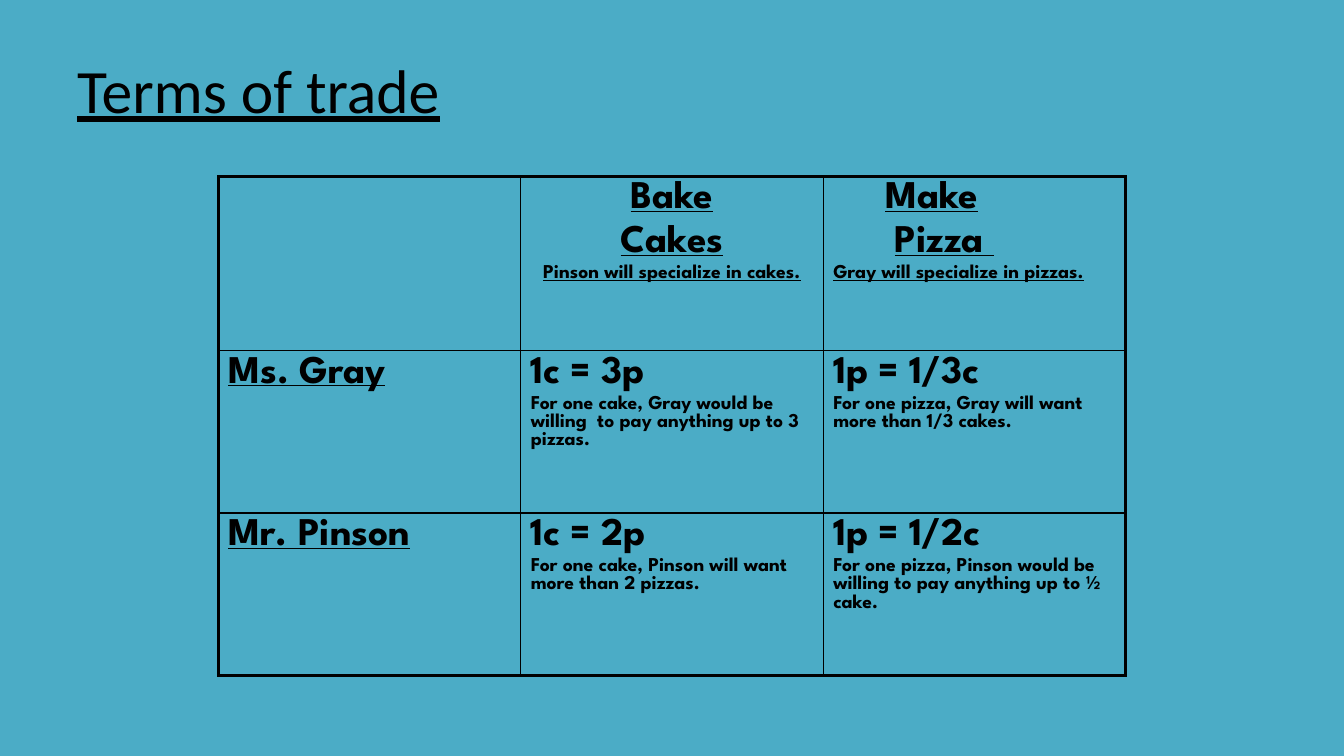
import pptx
import pptx.util
import pptx.dml.color
import pptx.enum.text
import pptx.oxml.ns
import lxml.etree

Pt = pptx.util.Pt
PP_ALIGN = pptx.enum.text.PP_ALIGN
INK = "000000"
ROWS = [
    [[], ["Bake", "Cakes", "Pinson will specialize in cakes."],
     ["Make", "Pizza ", "Gray will specialize in pizzas."]],
    [["Ms. Gray"],
     ["1c = 3p", "For one cake, Gray would be willing  to pay anything up to 3 pizzas."],
     ["1p = 1/3c", "For one pizza, Gray will want more than 1/3 cakes."]],
    [["Mr. Pinson"],
     ["1c = 2p", "For one cake, Pinson will want more than 2 pizzas."],
     ["1p = 1/2c", "For one pizza, Pinson would be willing to pay anything up to ½ cake."]],
]
INDENTS = {"Make": 37, "Pizza ": 44}


def color(value):
    """Turn a hex string into a colour."""
    return pptx.dml.color.RGBColor.from_string(value)


def style_paragraph(p, font, size, bold=False, underline=False):
    """Format every run of a paragraph."""
    for r in p.runs:
        r.font.name = font
        r.font.size = Pt(size)
        r.font.bold = bold
        r.font.underline = underline
        r.font.color.rgb = color(INK)


def add_title(s, text, left, top, width, height):
    """Place the underlined slide title."""
    tf = s.shapes.add_textbox(Pt(left), Pt(top), Pt(width), Pt(height)).text_frame
    tf.word_wrap = True
    tf.vertical_anchor = pptx.enum.text.MSO_ANCHOR.MIDDLE
    tf.text = text
    p = tf.paragraphs[0]
    p.line_spacing = 0.9
    style_paragraph(p, "Calibri", 44, underline=True)


def set_borders(cell, widths):
    """Draw the cell edges given as a mapping of side to width."""
    qn = pptx.oxml.ns.qn
    tcPr = cell._tc.get_or_add_tcPr()
    for side, width in widths.items():
        ln = lxml.etree.SubElement(tcPr, qn("a:ln" + side), w=str(Pt(width)))
        fill = lxml.etree.SubElement(ln, qn("a:solidFill"))
        lxml.etree.SubElement(fill, qn("a:srgbClr"), val=INK)


def fill_cell(cell, lines, row, col):
    """Write the heading lines of a cell and its closing small note."""
    tf = cell.text_frame
    tf.text = "\n".join(lines)
    for i, p in enumerate(tf.paragraphs):
        is_note = i > 0 and i == len(lines) - 1
        size = 14 if is_note else 28
        p.space_before = Pt(size * 0.2)
        p.alignment = PP_ALIGN.CENTER if (row, col) == (0, 1) else PP_ALIGN.LEFT
        if p.text in INDENTS:
            p._p.get_or_add_pPr().set("marL", str(Pt(INDENTS[p.text])))
        style_paragraph(p, "League Spartan", size, True, row == 0 or col == 0)


def add_trade_table(s, left, top, width, heights):
    """Place the table of trade terms with a heavy outer frame."""
    last_row, last_col = len(ROWS) - 1, len(ROWS[0]) - 1
    table = s.shapes.add_table(last_row + 1, last_col + 1, Pt(left), Pt(top),
                               Pt(width), Pt(sum(heights))).table
    table.first_row = table.horz_banding = False
    for row, lines_by_col in enumerate(ROWS):
        table.rows[row].height = Pt(heights[row])
        for col, lines in enumerate(lines_by_col):
            cell = table.cell(row, col)
            outer = {"L": col == 0, "R": col == last_col,
                     "T": row == 0, "B": row == last_row}
            set_borders(cell, {side: 2.25 if edge else 1 for side, edge in outer.items()})
            cell.fill.background()
            fill_cell(cell, lines, row, col)


def main():
    """Build and save the slide."""
    prs = pptx.Presentation()
    prs.slide_width, prs.slide_height = Pt(960), Pt(540)
    s = prs.slides.add_slide(prs.slide_layouts[6])
    s.background.fill.solid()
    s.background.fill.fore_color.rgb = color("4BACC6")
    add_title(s, "Terms of trade", 48, 21.6, 864, 90)
    add_trade_table(s, 156, 126, 648, [124.5, 116, 116])
    prs.save("out.pptx")


if __name__ == "__main__":
    main()
